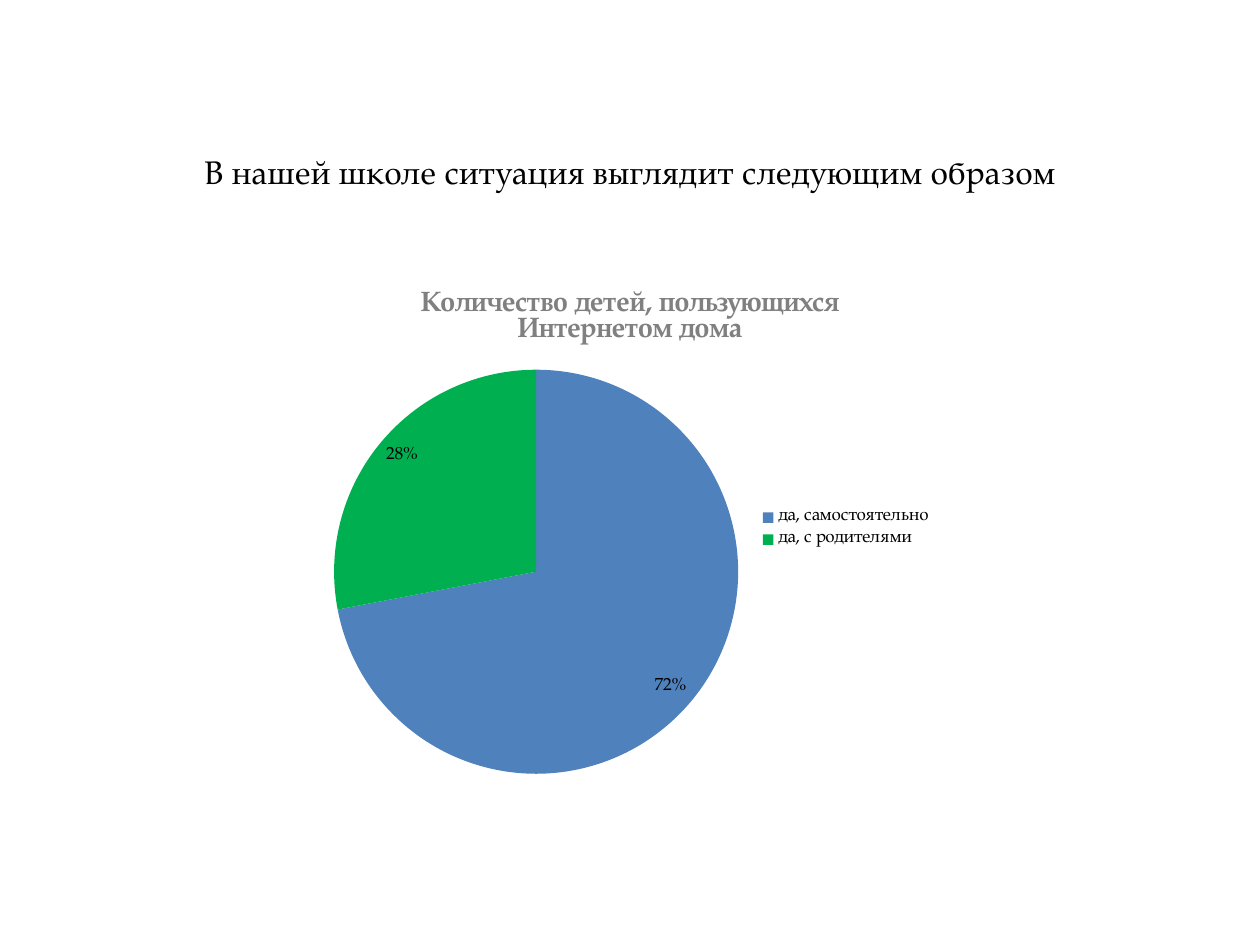
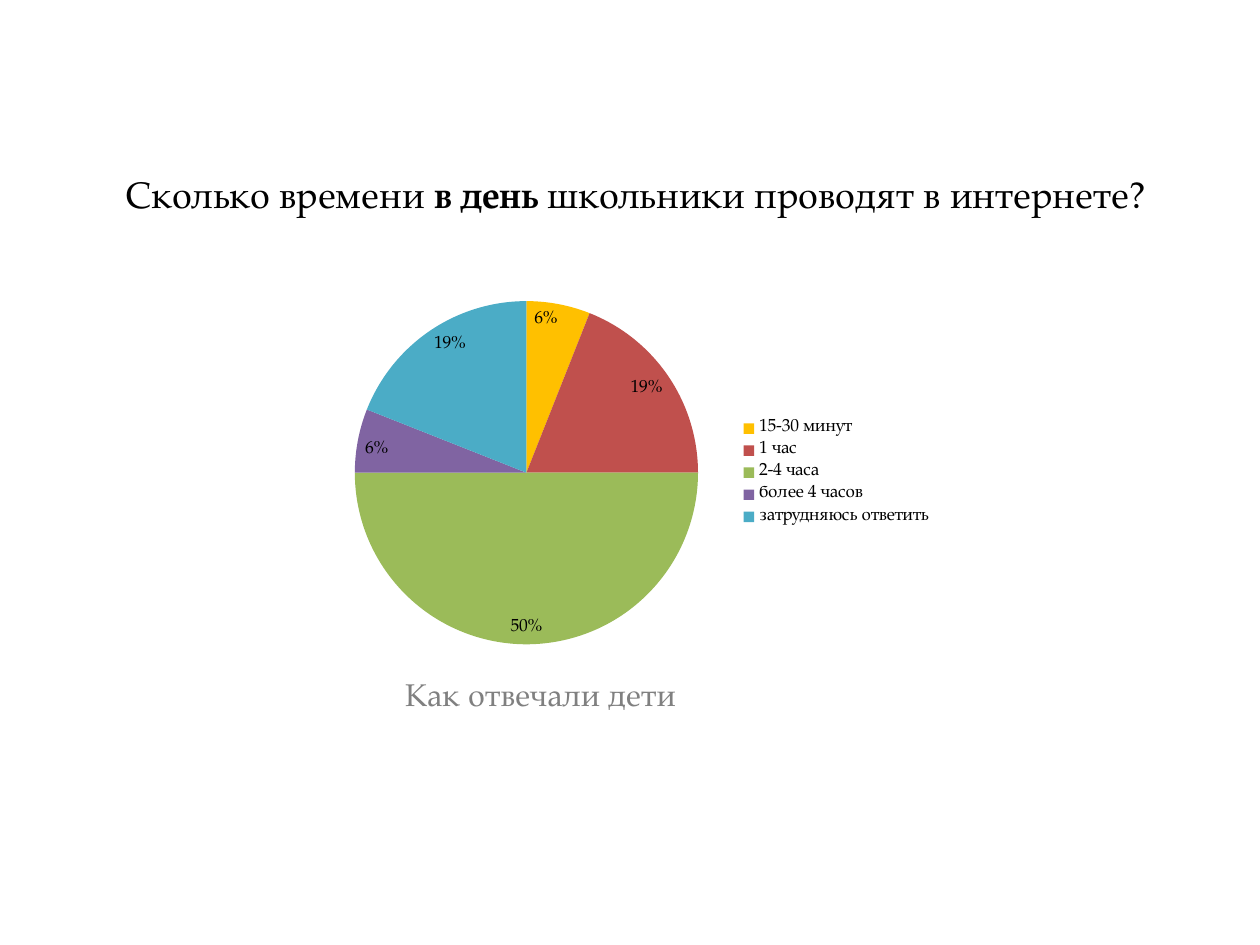
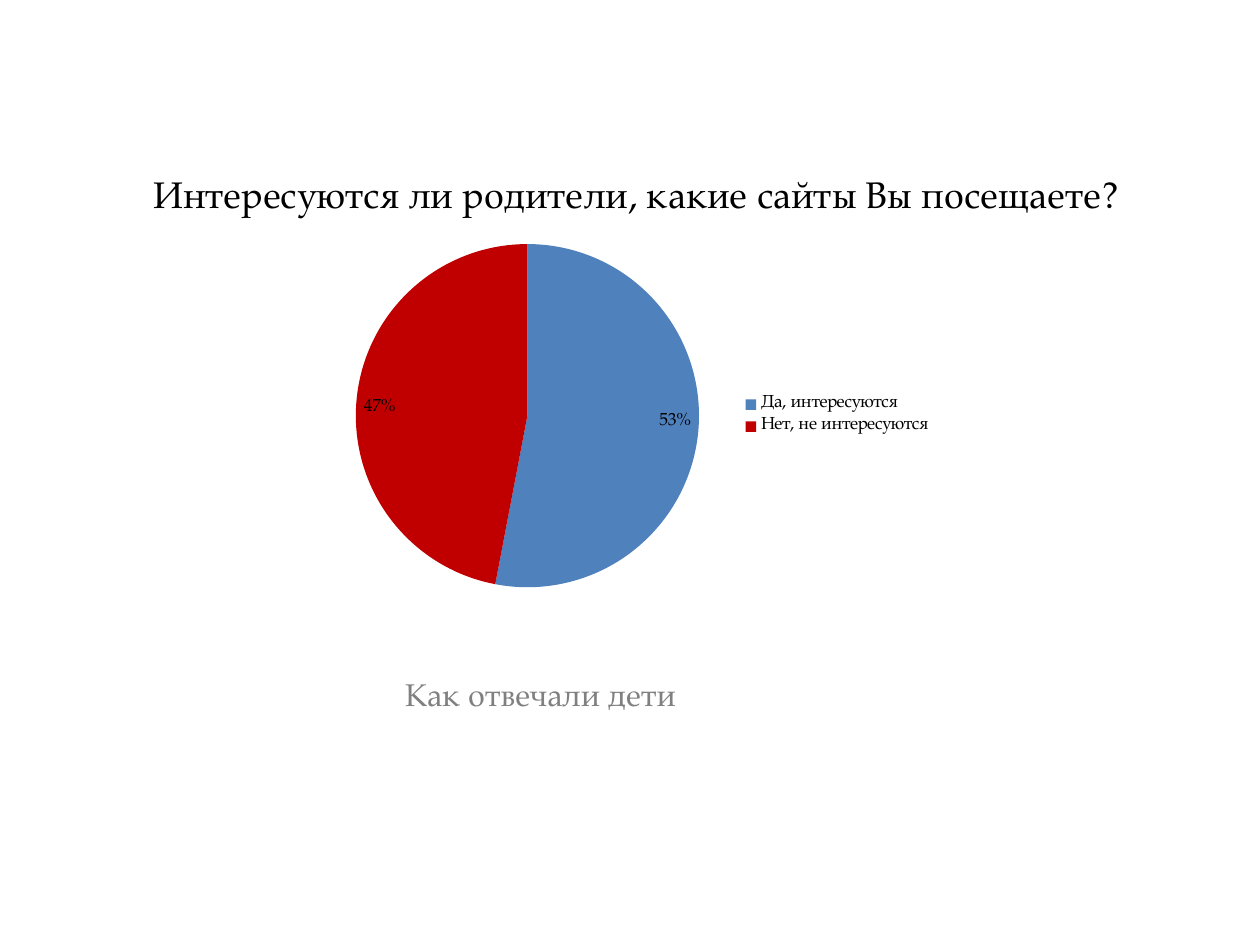
from dataclasses import dataclass

from pptx import Presentation
from pptx.chart import data
from pptx.dml.color import RGBColor
from pptx.enum import chart as kinds, text
from pptx.slide import Slide
from pptx.util import Cm, Pt

FONT = "TeX Gyre Pagella"
BLACK = RGBColor(0x00, 0x00, 0x00)
GRAY = RGBColor(0x80, 0x80, 0x80)
BLUE = RGBColor(0x4F, 0x81, 0xBD)
GREEN = RGBColor(0x00, 0xB0, 0x50)
GOLD = RGBColor(0xFF, 0xC0, 0x00)
BRICK = RGBColor(0xC0, 0x50, 0x4D)
OLIVE = RGBColor(0x9B, 0xBB, 0x59)
PURPLE = RGBColor(0x80, 0x64, 0xA2)
TEAL = RGBColor(0x4B, 0xAC, 0xC6)
RED = RGBColor(0xC0, 0x00, 0x00)

WIDTH, HEIGHT = Cm(25.4), Cm(19.05)
LEFT, SPAN = Cm(6.35), Cm(12.7)


@dataclass(frozen=True)
class Frame:
    left: float
    width: float
    height: float
    inset: float
    size: float


@dataclass(frozen=True)
class Part:
    words: str
    bold: bool = False


@dataclass(frozen=True)
class Slice:
    label: str
    value: int
    color: RGBColor


@dataclass(frozen=True)
class Pie:
    top: float
    height: float
    slices: tuple[Slice, ...]
    title: str = ""


@dataclass(frozen=True)
class Page:
    frame: Frame
    head: tuple[Part, ...]
    pie: Pie
    note: str = ""


SMALL = Frame(1.27, 22.86, 17.02, 3.07, 18.7)
LARGE = Frame(1.07, 23.5, 20.32, 3.45, 21.2)
NOTE = "Как отвечали дети"

PAGES = (
    Page(
        SMALL,
        (Part("В нашей школе ситуация выглядит следующим образом"),),
        Pie(5.36, 10.59, (
            Slice("да, самостоятельно", 72, BLUE),
            Slice("да, с родителями", 28, GREEN),
        ), "Количество детей, пользующихся Интернетом дома"),
    ),
    Page(
        LARGE,
        (
            Part("Сколько времени "),
            Part("в день ", True),
            Part("школьники проводят в интернете?"),
        ),
        Pie(5.72, 7.62, (
            Slice("15-30 минут", 6, GOLD),
            Slice("1 час", 19, BRICK),
            Slice("2-4 часа", 50, OLIVE),
            Slice("более 4 часов", 6, PURPLE),
            Slice("затрудняюсь ответить", 19, TEAL),
        )),
        NOTE,
    ),
    Page(
        LARGE,
        (Part("Интересуются ли родители, какие сайты Вы посещаете?"),),
        Pie(4.57, 7.62, (
            Slice("Да, интересуются", 53, BLUE),
            Slice("Нет, не интересуются", 47, RED),
        )),
        NOTE,
    ),
)


def style(font: text.Font if hasattr(text, "Font") else object, size: float, color: RGBColor) -> None:
    font.name = FONT
    font.size = Pt(size)
    font.color.rgb = color


def add_head(slide: Slide, frame: Frame, parts: tuple[Part, ...]) -> None:
    box = slide.shapes.add_textbox(
        Cm(frame.left), Cm(0), Cm(frame.width), Cm(frame.height)
    ).text_frame
    box.word_wrap = True
    box.margin_top = Cm(frame.inset)
    line = box.paragraphs[0]
    line.alignment = text.PP_ALIGN.CENTER
    style(line.font, frame.size, BLACK)
    for part in parts:
        run = line.add_run()
        run.text = part.words
        if part.bold:
            run.font.bold = True


def add_note(slide: Slide, words: str) -> None:
    box = slide.shapes.add_textbox(Cm(7.92), Cm(13.49), Cm(6.1), Cm(1.02)).text_frame
    box.word_wrap = False
    box.auto_size = text.MSO_AUTO_SIZE.SHAPE_TO_FIT_TEXT
    line = box.paragraphs[0]
    line.text = words
    style(line.font, 18, GRAY)


def add_pie(slide: Slide, pie: Pie) -> None:
    table = data.CategoryChartData()
    table.categories = [item.label for item in pie.slices]
    table.add_series("Series 1", [item.value for item in pie.slices])
    chart = slide.shapes.add_chart(
        kinds.XL_CHART_TYPE.PIE, LEFT, Cm(pie.top), SPAN, Cm(pie.height), table
    ).chart
    style(chart.font, 10, BLACK)
    chart.has_title = bool(pie.title)
    if pie.title:
        line = chart.chart_title.text_frame.paragraphs[0]
        line.text = pie.title
        style(line.font, 16, GRAY)
        line.font.bold = True
    chart.has_legend = True
    chart.legend.position = kinds.XL_LEGEND_POSITION.RIGHT
    chart.legend.include_in_layout = False
    plot = chart.plots[0]
    plot.vary_by_categories = True
    plot.has_data_labels = True
    labels = plot.data_labels
    labels.show_percentage = True
    labels.show_value = False
    labels.number_format = "0%"
    labels.number_format_is_linked = False
    labels.position = kinds.XL_LABEL_POSITION.INSIDE_END
    for index, item in enumerate(pie.slices):
        fill = plot.series[0].points[index].format.fill
        fill.solid()
        fill.fore_color.rgb = item.color


def main() -> None:
    deck = Presentation()
    deck.slide_width, deck.slide_height = WIDTH, HEIGHT
    for page in PAGES:
        slide = deck.slides.add_slide(deck.slide_layouts[6])
        add_head(slide, page.frame, page.head)
        if page.note:
            add_note(slide, page.note)
        add_pie(slide, page.pie)
    deck.save("out.pptx")


if __name__ == "__main__":
    main()
